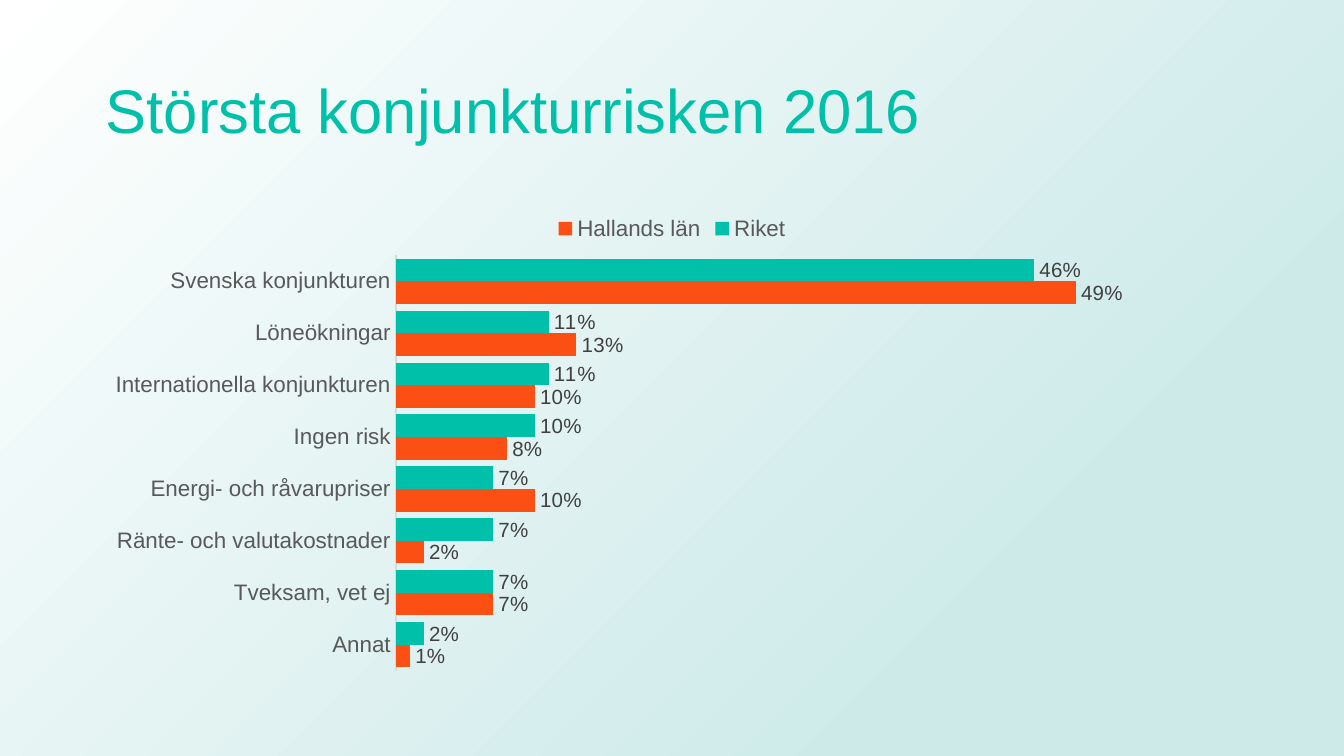
from lxml import etree
from pptx import Presentation
from pptx.chart.data import CategoryChartData
from pptx.dml.color import RGBColor
from pptx.enum.chart import (
    XL_CHART_TYPE, XL_LABEL_POSITION, XL_LEGEND_POSITION, XL_TICK_MARK)
from pptx.enum.shapes import MSO_SHAPE
from pptx.enum.text import MSO_ANCHOR, MSO_AUTO_SIZE, PP_ALIGN
from pptx.oxml.ns import qn
from pptx.util import Pt

BARS = XL_CHART_TYPE.BAR_CLUSTERED
OUTSIDE = XL_LABEL_POSITION.OUTSIDE_END
TOP = XL_LEGEND_POSITION.TOP
NO_TICK = XL_TICK_MARK.NONE
RECTANGLE = MSO_SHAPE.RECTANGLE
MIDDLE = MSO_ANCHOR.MIDDLE
NO_AUTOFIT = MSO_AUTO_SIZE.NONE
LEFT = PP_ALIGN.LEFT

TEAL = RGBColor(0x00, 0xC0, 0xA9)
ORANGE = RGBColor(0xFB, 0x4F, 0x14)
MIST = RGBColor(0xCD, 0xEA, 0xE9)
WHITE = RGBColor(0xFF, 0xFF, 0xFF)
GREY = RGBColor(0x59, 0x59, 0x59)
DARK_GREY = RGBColor(0x40, 0x40, 0x40)
LIGHT_GREY = RGBColor(0xD9, 0xD9, 0xD9)

FONT = "Arial"
PERCENT = "0%"
PAGE_WIDTH, PAGE_HEIGHT = 720, 405
MARGIN = 49.5
CONTENT_WIDTH = PAGE_WIDTH - 2 * MARGIN

RISKS = ["Svenska konjunkturen", "Löneökningar", "Internationella konjunkturen",
         "Ingen risk", "Energi- och råvarupriser", "Ränte- och valutakostnader",
         "Tveksam, vet ej", "Annat"]
REGIONS = [
    ("Riket", TEAL, [0.46, 0.11, 0.11, 0.10, 0.07, 0.07, 0.07, 0.02]),
    ("Hallands län", ORANGE, [0.49, 0.13, 0.10, 0.08, 0.10, 0.02, 0.07, 0.01]),
]


def style_font(font, size, color):
    font.name = FONT
    font.size = Pt(size)
    font.color.rgb = color


def write_text(frame, text, *, size, color, align=LEFT, spacing=1.0):
    para = frame.paragraphs[0]
    para.alignment = align
    para.line_spacing = spacing
    span = para.add_run()
    span.text = text
    style_font(span.font, size, color)


def add_backdrop(page, left, top, width, height):
    """Gradient that spreads from the lower right corner, behind everything."""
    box = page.shapes.add_shape(
        RECTANGLE, Pt(left), Pt(top), Pt(width), Pt(height))
    box.shadow.inherit = False
    box.line.fill.background()
    box.fill.gradient()
    for stop, position, color in zip(
            box.fill.gradient_stops, (0.23, 1), (MIST, WHITE)):
        stop.position = position
        stop.color.rgb = color
    gradient = box.element.spPr.find(qn("a:gradFill"))
    linear = gradient.find(qn("a:lin"))
    circle = etree.Element(qn("a:path"), path="circle")
    etree.SubElement(circle, qn("a:fillToRect"), l="100000", t="100000")
    gradient.replace(linear, circle)
    page.shapes.element.insert(2, box.element)


def place_title(page, text, left, top, width, height):
    title = page.shapes.title
    title.left, title.top = Pt(left), Pt(top)
    title.width, title.height = Pt(width), Pt(height)
    frame = title.text_frame
    frame.word_wrap = True
    frame.auto_size = NO_AUTOFIT
    frame.vertical_anchor = MIDDLE
    write_text(frame, text, size=33, color=TEAL, spacing=0.9)


def add_risk_chart(page, left, top, width, height):
    data = CategoryChartData(number_format=PERCENT)
    data.categories = RISKS
    for name, _, values in REGIONS:
        data.add_series(name, values)
    chart = page.shapes.add_chart(
        BARS, Pt(left), Pt(top), Pt(width), Pt(height), data).chart
    chart.has_title = False
    style_font(chart.font, 12, GREY)

    chart.has_legend = True
    chart.legend.position = TOP
    chart.legend.include_in_layout = False
    style_font(chart.legend.font, 12, GREY)

    risk_axis = chart.category_axis
    risk_axis.reverse_order = True
    risk_axis.major_tick_mark = risk_axis.minor_tick_mark = NO_TICK
    risk_axis.format.line.color.rgb = LIGHT_GREY
    risk_axis.format.line.width = Pt(0.75)
    style_font(risk_axis.tick_labels.font, 12, GREY)

    share_axis = chart.value_axis
    share_axis.minimum_scale, share_axis.maximum_scale = 0, 0.6
    share_axis.has_major_gridlines = False
    share_axis.tick_labels.number_format = PERCENT
    share_axis.tick_labels.number_format_is_linked = False
    share_axis.visible = False

    plot = chart.plots[0]
    plot.gap_width = 30
    plot.overlap = 0
    plot.vary_by_categories = False
    for series, (_, color, _) in zip(plot.series, REGIONS):
        series.invert_if_negative = False
        series.format.fill.solid()
        series.format.fill.fore_color.rgb = color
        labels = series.data_labels
        labels.show_value = True
        labels.position = OUTSIDE
        labels.number_format = PERCENT
        labels.number_format_is_linked = False
        style_font(labels.font, 11, DARK_GREY)


def main():
    deck = Presentation()
    deck.slide_width, deck.slide_height = Pt(PAGE_WIDTH), Pt(PAGE_HEIGHT)
    page = deck.slides.add_slide(deck.slide_layouts[5])
    add_backdrop(page, 0, 0, PAGE_WIDTH, PAGE_HEIGHT)
    place_title(page, "Största konjunkturrisken 2016",
                MARGIN, 21.5, CONTENT_WIDTH, 78.5)
    add_risk_chart(page, MARGIN, 108, CONTENT_WIDTH, 256.5)
    deck.save("out.pptx")


if __name__ == "__main__":
    main()
